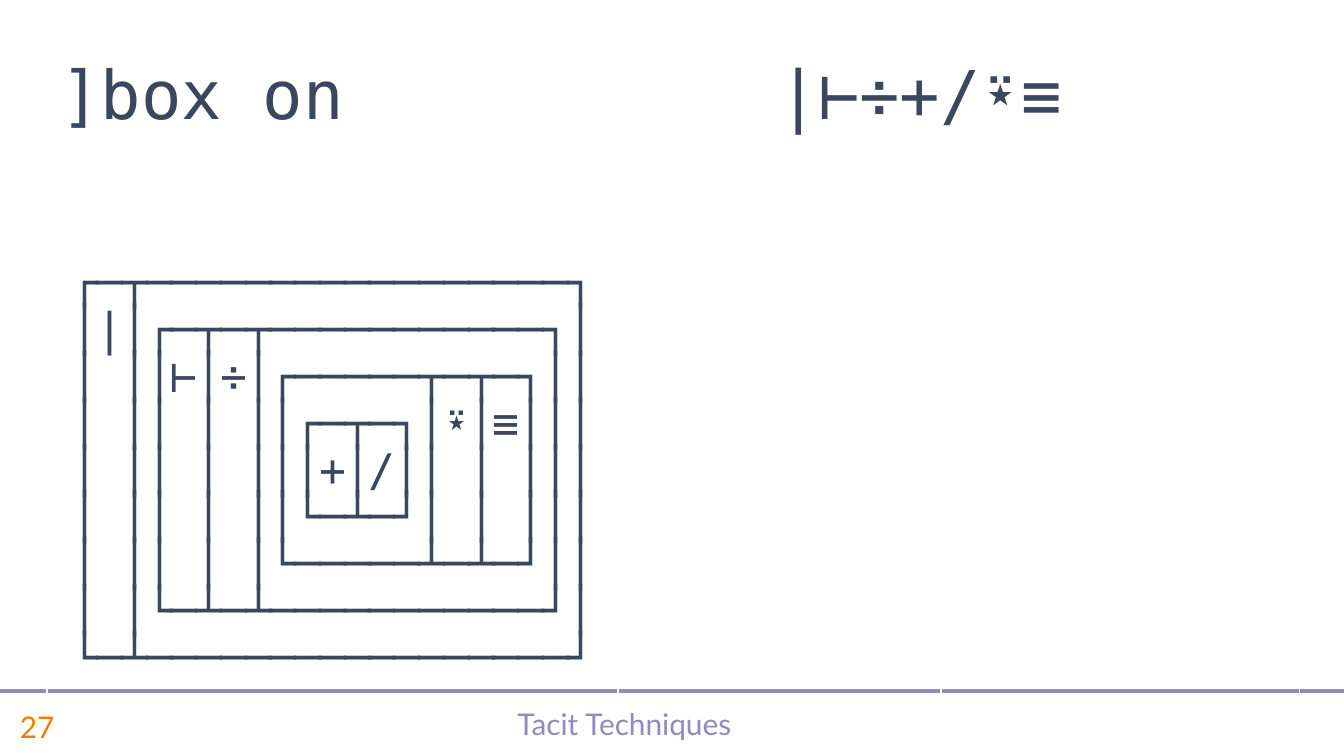
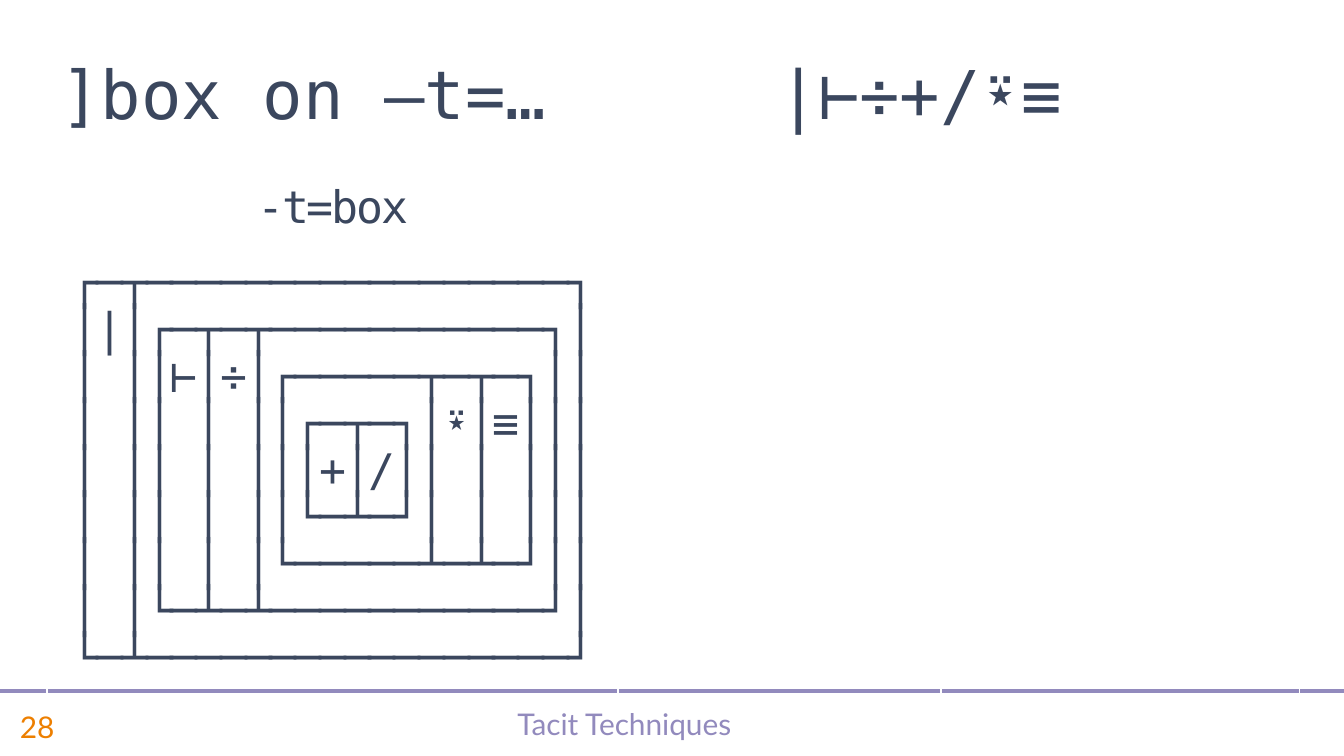
from lxml.etree import SubElement
from pptx import Presentation
from pptx.dml.color import RGBColor
from pptx.enum.shapes import MSO_CONNECTOR as Line
from pptx.enum.text import MSO_ANCHOR as Anchor, MSO_AUTO_SIZE as Fit, PP_ALIGN as Align
from pptx.oxml.ns import qn
from pptx.util import Pt

MONO, SANS = "DejaVu Sans Mono", "Lato"
INK, LILAC, ORANGE = "3B475E", "928ABD", "ED7F00"
WIDTH, HEIGHT = 720, 405
RULE_Y = 370
FOOT_Y, FOOT_H = 373.7, 31.5
TITLE = (25.2, 20.9, 551.5, 54)
TAB = 536.4
GRID = (25.2, 99.4, 671, 249)
COLS = (306, 172.8, 192.2)
ROWS = (40.3, 208.8)

FOOTER = "Tacit Techniques"
TRAIN = "|⊢÷+/⍣≡"
BOXES = """\
┌─┬─────────────────┐
│|│┌─┬─┬───────────┐│
│ ││⊢│÷│┌─────┬─┬─┐││
│ ││ │ ││┌─┬─┐│⍣│≡│││
│ ││ │ │││+│/││ │ │││
│ ││ │ ││└─┴─┘│ │ │││
│ ││ │ │└─────┴─┴─┘││
│ │└─┴─┴───────────┘│
└─┴─────────────────┘"""
# number, command, heading above the boxes
SLIDES = [
    (27, "]box on", ""),
    (28, "]box on –t=…", "-t=box"),
]


def color(code):
    return RGBColor.from_string(code)


def style(par, name, size, code, align=Align.LEFT, space=None, track=0):
    """Format a paragraph and its runs; track is letter spacing in points."""
    par.alignment = align
    if space:
        par.line_spacing = space
    for run in par.runs:
        font = run.font
        font.name, font.size = name, Pt(size)
        font.color.rgb = color(code)
        props = font._element
        SubElement(props, qn("a:ea")).set("typeface", name)
        if track:
            props.set("spc", str(round(track * 100)))


def add_title(slide, text):
    title = slide.shapes.title
    title.left, title.top, title.width, title.height = map(Pt, TITLE)
    frame = title.text_frame
    frame.text = text
    frame.auto_size = Fit.NONE
    frame.vertical_anchor = Anchor.BOTTOM
    par = frame.paragraphs[0]
    tabs = SubElement(par._p.get_or_add_pPr(), qn("a:tabLst"))
    tab = SubElement(tabs, qn("a:tab"))
    tab.set("pos", str(Pt(TAB)))
    tab.set("algn", "r")
    style(par, MONO, 36, INK)


def add_note(slide, text, left, width, code, **form):
    box = slide.shapes.add_textbox(Pt(left), Pt(FOOT_Y), Pt(width), Pt(FOOT_H))
    frame = box.text_frame
    frame.word_wrap = True
    frame.vertical_anchor = Anchor.MIDDLE
    frame.text = text
    style(frame.paragraphs[0], SANS, 16, code, **form)


def add_footer(slide, number):
    add_note(slide, FOOTER, 56.2, 556.6, LILAC, align=Align.CENTER, space=0.8)
    add_note(slide, str(number), 3.6, 52.6, ORANGE)
    rule = slide.shapes.add_connector(
        Line.STRAIGHT, Pt(0), Pt(RULE_Y), Pt(WIDTH), Pt(RULE_Y))
    rule.line.color.rgb = color(LILAC)
    rule.line.width = Pt(2.25)
    SubElement(rule._element.spPr, qn("a:effectLst"))


def fill_cell(cell, text):
    cell.margin_left = cell.margin_right = Pt(0)
    cell.margin_top = cell.margin_bottom = Pt(0)
    cell.text_frame.text = text
    for par in cell.text_frame.paragraphs:
        style(par, MONO, 24, INK, Align.CENTER, 0.9, -1.2)


def add_grid(slide, texts):
    """Add the table and put the texts down its first column."""
    table = slide.shapes.add_table(len(ROWS), len(COLS), *map(Pt, GRID)).table
    table.first_row = table.horz_banding = False
    for col, width in zip(table.columns, COLS):
        col.width = Pt(width)
    for row, height in zip(table.rows, ROWS):
        row.height = Pt(height)
    for cell in table.iter_cells():
        cell.fill.background()
    for row, text in enumerate(texts):
        if text:
            fill_cell(table.cell(row, 0), text)


def main():
    deck = Presentation()
    deck.slide_width, deck.slide_height = Pt(WIDTH), Pt(HEIGHT)
    for number, command, head in SLIDES:
        slide = deck.slides.add_slide(deck.slide_layouts[5])
        add_footer(slide, number)
        add_grid(slide, (head, BOXES))
        add_title(slide, f"{command}\t{TRAIN}")
    deck.save("out.pptx")


if __name__ == "__main__":
    main()
